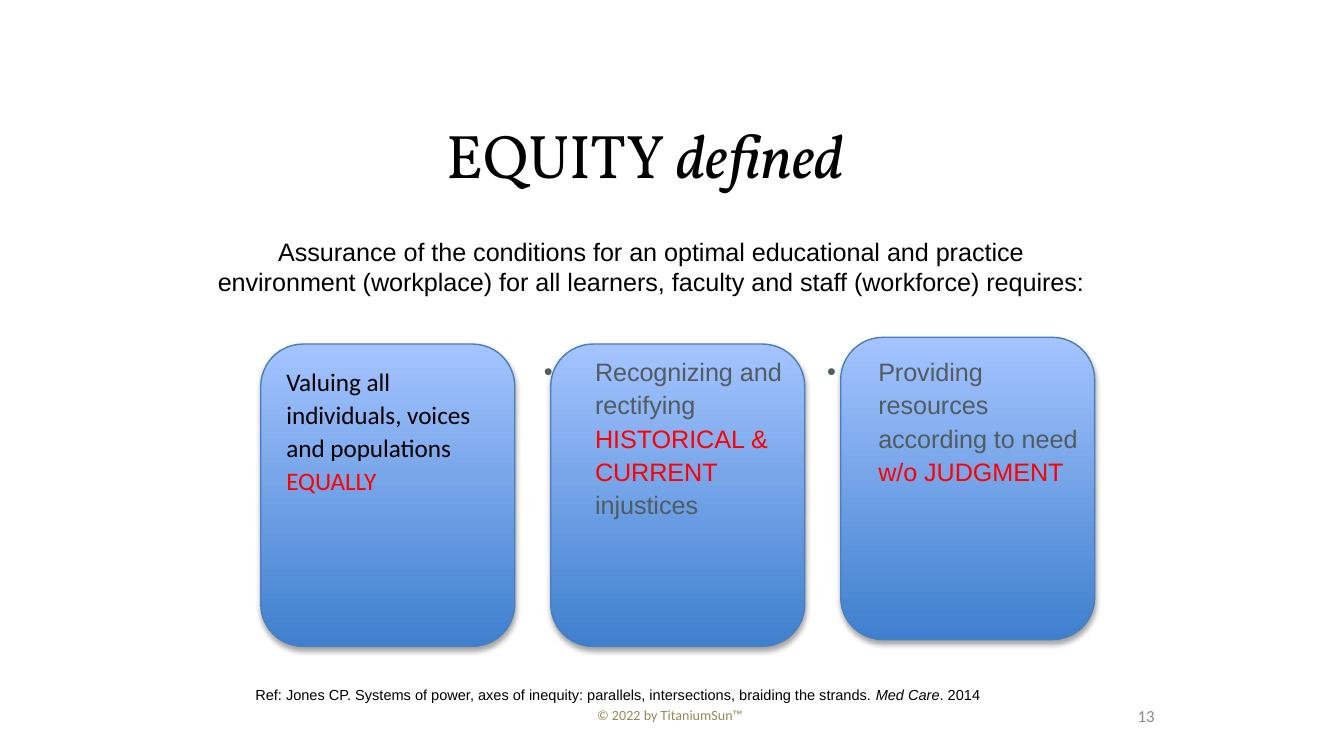
from collections import namedtuple

from lxml.etree import SubElement
from pptx import Presentation
from pptx.dml.color import RGBColor
from pptx.enum.shapes import MSO_SHAPE
from pptx.enum.text import MSO_ANCHOR, PP_ALIGN
from pptx.oxml.ns import qn
from pptx.util import Inches, Pt

COLUMN = Inches(0.1)
ROW = Inches(0.1)
BLACK, RED, GREY = "000000", "FF0000", "515C60"
Box = namedtuple("Box", "left top width height")


def color(hex_text):
    """Turn a hex string into a colour."""
    return RGBColor.from_string(hex_text)


def place(box):
    """Turn a box in columns and rows into slide lengths."""
    return (round(box.left * COLUMN), round(box.top * ROW),
            round(box.width * COLUMN), round(box.height * ROW))


def add_text_box(slide, box, anchor=MSO_ANCHOR.TOP, insets=(0, 0, 0, 0)):
    """Add a wrapping text box and return its text frame."""
    frame = slide.shapes.add_textbox(*place(box)).text_frame
    set_frame(frame, anchor, insets)
    return frame


def set_frame(frame, anchor, insets):
    """Set wrapping, anchor and the left, top, right and bottom insets."""
    frame.word_wrap = True
    frame.vertical_anchor = anchor
    (frame.margin_left, frame.margin_top,
     frame.margin_right, frame.margin_bottom) = map(Inches, insets)


def write(paragraph, *runs, size=13.5, font="Arial", fill=BLACK, align=PP_ALIGN.LEFT,
          spacing=1.0, before=0, bullet=False, baseline=0):
    """Write runs, each a text with its own format changes, into a paragraph."""
    paragraph.alignment = align
    paragraph.line_spacing = spacing
    paragraph.space_before = Pt(before)
    if bullet:
        properties = paragraph._p.get_or_add_pPr()
        properties.set("marL", str(Inches(0.38)))
        properties.set("indent", str(-Inches(0.38)))
        SubElement(properties, qn("a:buFont"), typeface="Arial")
        SubElement(properties, qn("a:buChar"), char="•")
    for text, changes in runs:
        run = paragraph.add_run()
        run.text = text
        run.font.size = Pt(size)
        run.font.name = font
        run.font.italic = changes.get("italic", False)
        run.font.color.rgb = color(changes.get("fill", fill))
        if baseline:
            run._r.get_or_add_rPr().set("baseline", str(baseline * 1000))


def add_heading(slide, box):
    """Add the title with the definition below it."""
    frame = add_text_box(slide, box, MSO_ANCHOR.BOTTOM)
    write(frame.paragraphs[0], ("EQUITY", {}), (" defined ", {"italic": True}),
          size=33, font="Vollkorn", align=PP_ALIGN.CENTER)
    write(frame.add_paragraph(),
          ("Assurance of the conditions for an optimal educational and practice "
           "environment (workplace) for all learners, faculty and staff "
           "(workforce) requires:", {}),
          align=PP_ALIGN.CENTER, before=24.5)


def add_card(slide, box):
    """Add a shaded rounded card and return its text frame."""
    card = slide.shapes.add_shape(MSO_SHAPE.ROUNDED_RECTANGLE, *place(box))
    card.fill.gradient()
    card.fill.gradient_angle = 90
    for stop, (position, shade) in zip(card.fill.gradient_stops,
                                       ((0, "3F80CE"), (1, "A4C4FF"))):
        stop.position = position
        stop.color.rgb = color(shade)
    card.line.color.rgb = color("4B7EBC")
    card.line.width = Pt(0.75)
    card.shadow.inherit = False
    effects = card._element.spPr.find(qn("a:effectLst"))
    shadow = SubElement(effects, qn("a:outerShdw"), blurRad=str(Pt(3.1)),
                        dist=str(Pt(1.8)), dir="5400000", rotWithShape="0")
    black = SubElement(shadow, qn("a:srgbClr"), val=BLACK)
    SubElement(black, qn("a:alpha"), val="35000")
    set_frame(card.text_frame, MSO_ANCHOR.TOP, (0.1, 0.05, 0.1, 0.05))
    return card.text_frame


def add_cards(slide, box):
    """Add the three requirements as a row of cards."""
    step = (box.width - 18.9) / 2
    first, second, third = (Box(box.left + step * index, box.top + shift, 18.9, 22.5)
                            for index, shift in enumerate((0.5, 0.5, 0)))
    write(add_card(slide, first).paragraphs[0],
          ("Valuing all individuals, voices and populations ", {}),
          ("EQUALLY", {"fill": RED}), font="Calibri", spacing=1.1)
    bulleted = (
        (second, 0.5, (("Recognizing and rectifying ", {}),
                       ("HISTORICAL & CURRENT ", {"fill": RED}),
                       ("injustices", {}))),
        (third, 1, (("Providing resources according to need ", {}),
                    ("w/o JUDGMENT", {"fill": RED}))),
    )
    for card, overhang, runs in bulleted:
        add_card(slide, card)
        text_box = Box(card.left - overhang, box.top - 1, 19, 19.4)
        frame = add_text_box(slide, text_box, insets=(0, 0.22, 0, 0))
        write(frame.paragraphs[0], *runs, fill=GREY, spacing=1.1, bullet=True)


def add_footer(slide, box):
    """Add the reference, the copyright line and the slide number."""
    reference = add_text_box(slide, Box(box.left, box.top, 65.6, 3),
                             insets=(0.07, 0.04, 0.07, 0.04))
    write(reference.paragraphs[0],
          ("Ref: Jones CP. Systems of power, axes of inequity: parallels, "
           "intersections, braiding the strands. ", {}),
          ("Med Care", {"italic": True}), (". 2014", {}), baseline=30)
    rights = add_text_box(slide, Box(box.left + 18.7, box.top + 1.7, 25.7, 2.3),
                          insets=(0.1, 0.05, 0.1, 0.05))
    write(rights.paragraphs[0], ("© 2022 by TitaniumSun™", {}),
          size=7.5, font="Calibri", fill="948A54", align=PP_ALIGN.CENTER)
    number = add_text_box(slide, Box(box.left + box.width - 4.5, box.top + 0.7, 4.5, 4.3),
                          MSO_ANCHOR.MIDDLE)
    write(number.paragraphs[0], ("13", {}),
          size=9, font="Calibri", fill="8C8C8C", align=PP_ALIGN.RIGHT)


def main():
    """Build and save the slide."""
    presentation = Presentation()
    presentation.slide_width = 100 * COLUMN
    presentation.slide_height = round(56.25 * ROW)
    slide = presentation.slides.add_slide(presentation.slide_layouts[6])
    add_heading(slide, Box(15.5, 7.5, 65.9, 14.6))
    add_cards(slide, Box(19.4, 25.1, 62.05, 23))
    add_footer(slide, Box(18.3, 50.4, 67.6, 5))
    presentation.save("out.pptx")


if __name__ == "__main__":
    main()
